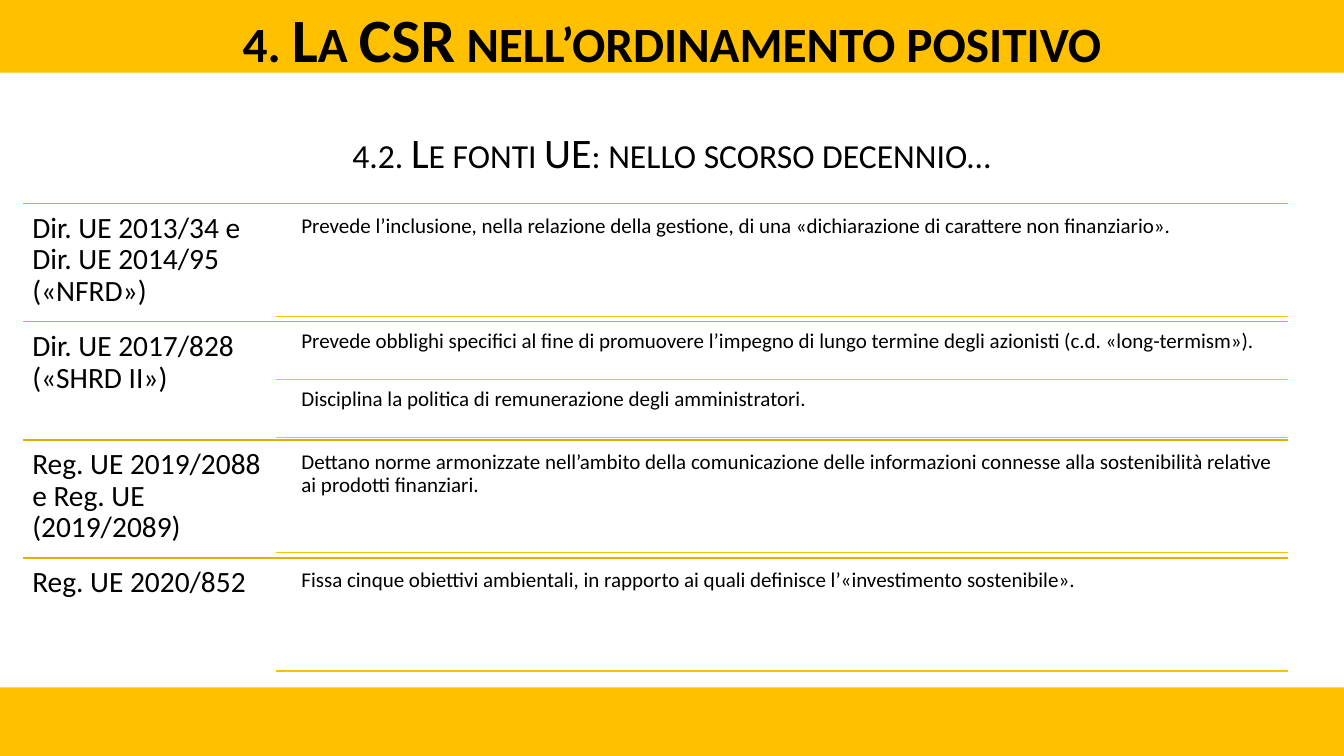
from lxml import etree
from pptx import Presentation
from pptx.dml.color import RGBColor
from pptx.enum import shapes, text
from pptx.oxml.ns import qn
from pptx.util import Inches, Pt

GOLD, DARK_GOLD, BLACK = "FFC000", "E7AE00", "000000"
SLIDE_W, SLIDE_H = 13.33, 7.5
LABEL_W, TEXT_INDENT = 2.51, 0.19

SOURCES = [
    ("Dir. UE 2013/34 e Dir. UE 2014/95 («NFRD»)",
     ["Prevede l’inclusione, nella relazione della gestione, di una "
      "«dichiarazione di carattere non finanziario»."]),
    ("Dir. UE 2017/828 («SHRD II»)",
     ["Prevede obblighi specifici al fine di promuovere l’impegno di lungo "
      "termine degli azionisti (c.d. «long-termism»).",
      "Disciplina la politica di remunerazione degli amministratori."]),
    ("Reg. UE 2019/2088 e Reg. UE (2019/2089)",
     ["Dettano norme armonizzate nell’ambito della comunicazione delle "
      "informazioni connesse alla sostenibilità relative ai prodotti finanziari."]),
    ("Reg. UE 2020/852",
     ["Fissa cinque obiettivi ambientali, in rapporto ai quali definisce "
      "l’«investimento sostenibile»."]),
]


def color(value):
    return RGBColor.from_string(value)


def add_band(slide, x, y, w, h):
    s = slide.shapes.add_shape(shapes.MSO_SHAPE.RECTANGLE,
                               Inches(x), Inches(y), Inches(w), Inches(h))
    s.shadow.inherit = False
    s.fill.solid()
    s.fill.fore_color.rgb = color(GOLD)
    s.line.fill.background()


def add_rule(slide, left, right, y, line_color):
    """Draw a horizontal separator."""
    c = slide.shapes.add_connector(shapes.MSO_CONNECTOR.STRAIGHT,
                                   Inches(left), Inches(y), Inches(right), Inches(y))
    c.line.color.rgb = color(line_color)
    c.line.width = Pt(1)
    etree.SubElement(c._element.spPr, qn("a:effectLst"))


def add_text(slide, x, y, w, h, content, size, inset):
    """Add a one-paragraph text box; inset is (horizontal, vertical)."""
    s = slide.shapes.add_textbox(Inches(x), Inches(y), Inches(w), Inches(h))
    tf = s.text_frame
    tf.word_wrap = True
    tf.margin_left = tf.margin_right = Inches(inset[0])
    tf.margin_top = tf.margin_bottom = Inches(inset[1])
    tf.text = content
    font = tf.paragraphs[0].runs[0].font
    font.name, font.size, font.color.rgb = "Calibri", Pt(size), color(BLACK)
    return tf


def add_heading(slide, x, y, w, h, content, size, inset, bold=False):
    """Add a centred small-caps heading."""
    tf = add_text(slide, x, y, w, h, content, size, inset)
    p = tf.paragraphs[0]
    p.alignment = text.PP_ALIGN.CENTER
    r = p.runs[0]
    r.font.bold = bold
    r._r.get_or_add_rPr().set("cap", "small")
    return tf


def add_source(slide, x, y, w, h, label, provisions):
    """Add one legal source with its provisions, each closed by a rule."""
    add_rule(slide, x, x + w, y, DARK_GOLD)
    tf = add_text(slide, x, y, LABEL_W, h, label, 21, (0.09, 0.09))
    tf.paragraphs[0].line_spacing = 0.9

    rule_x = x + LABEL_W
    text_x = rule_x + TEXT_INDENT
    gap = h / (21 * len(provisions) + 1)
    item_h = 20 * gap
    for i, provision in enumerate(provisions):
        top = y + gap + i * (item_h + gap)
        tf = add_text(slide, text_x, top, x + w - text_x, item_h,
                      provision, 15, (0.06, 0.06))
        tf.paragraphs[0].line_spacing = 0.9
        add_rule(slide, rule_x, x + w, top + item_h, GOLD)


def add_sources(slide, x, y, w, h):
    row_h = h / len(SOURCES)
    for i, (label, provisions) in enumerate(SOURCES):
        add_source(slide, x, y + i * row_h, w, row_h, label, provisions)


def main():
    prs = Presentation()
    prs.slide_width, prs.slide_height = Inches(SLIDE_W), Inches(SLIDE_H)
    slide = prs.slides.add_slide(prs.slide_layouts[6])

    add_band(slide, 0, 6.82, SLIDE_W, 0.68)
    add_band(slide, 0, 0, SLIDE_W, 0.72)
    title = add_heading(slide, 0, 0.08, SLIDE_W, 0.59,
                        "4. La CSR nell’ordinamento positivo", 44, (0.07, 0.04), True)
    title.vertical_anchor = text.MSO_ANCHOR.MIDDLE
    add_heading(slide, 1.41, 1.21, 10.5, 0.61,
                "4.2. Le fonti UE: nello scorso decennio…", 30, (0.1, 0.05))
    add_sources(slide, 0.23, 2.02, 12.54, 4.69)

    prs.save("out.pptx")


if __name__ == "__main__":
    main()
